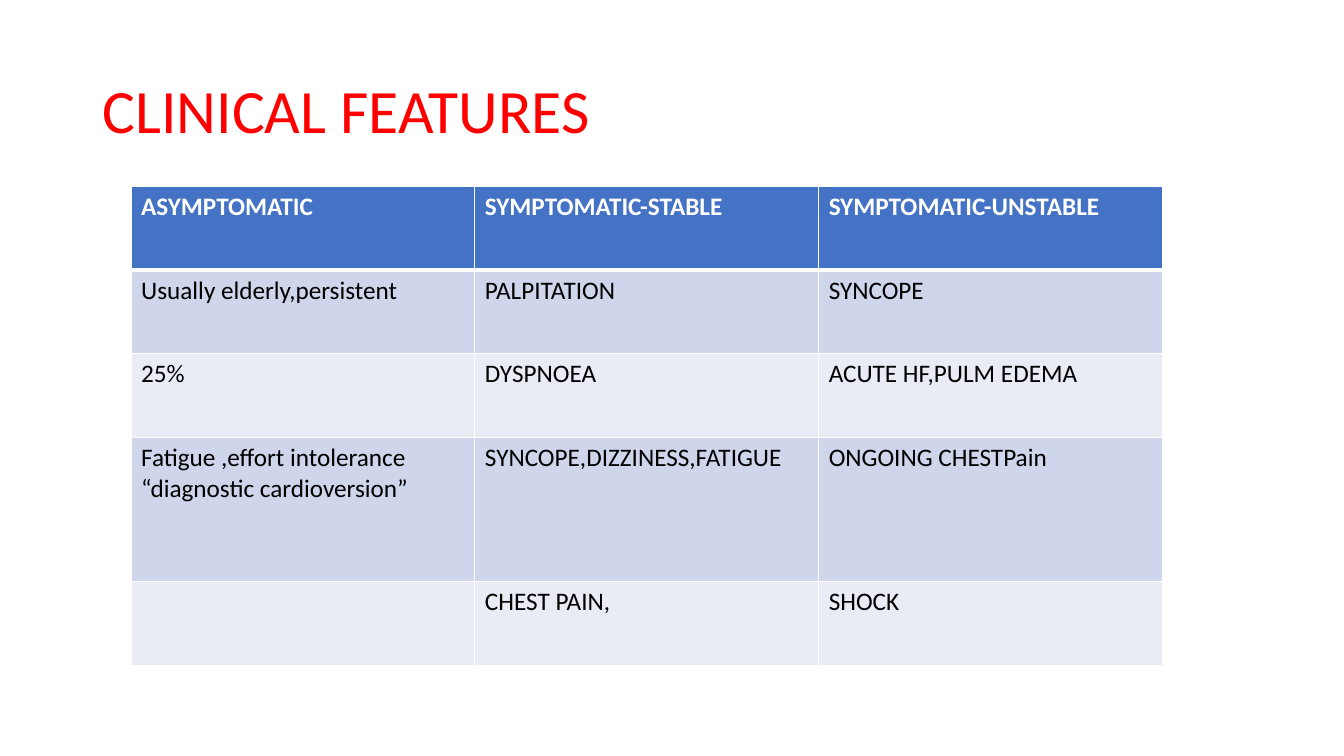
import lxml.etree
import pptx
import pptx.dml.color
import pptx.enum.text
import pptx.oxml.ns
import pptx.util

Inches = pptx.util.Inches
RGBColor = pptx.dml.color.RGBColor

RED = RGBColor(0xFF, 0x00, 0x00)
WHITE = RGBColor(0xFF, 0xFF, 0xFF)
BLACK = RGBColor(0x00, 0x00, 0x00)
HEADER_BLUE = RGBColor(0x44, 0x72, 0xC4)
BANDS = (RGBColor(0xCF, 0xD5, 0xEA), RGBColor(0xE9, 0xEB, 0xF5))
FONT = "Calibri"

TITLE_BOX = (0.92, 0.4, 11.5, 1.45)
TABLE_BOX = (1.3, 1.85, 10.23, 4.76)
ROW_HEIGHTS = (0.83, 0.83, 0.83, 1.43, 0.83)
FEATURES = (
    ("ASYMPTOMATIC", "SYMPTOMATIC-STABLE", "SYMPTOMATIC-UNSTABLE"),
    ("Usually elderly,persistent", "PALPITATION", "SYNCOPE"),
    ("25%", "DYSPNOEA", "ACUTE HF,PULM EDEMA"),
    ("Fatigue ,effort intolerance\n“diagnostic cardioversion”",
     "SYNCOPE,DIZZINESS,FATIGUE", "ONGOING CHESTPain"),
    ("", "CHEST PAIN,", "SHOCK"),
)


def add_span(para, text, size, color, bold=False):
    span = para.add_run()
    span.text = text
    span.font.name = FONT
    span.font.size = pptx.util.Pt(size)
    span.font.color.rgb = color
    span.font.bold = bold


def add_title(page, box, text):
    frame = page.shapes.add_textbox(*map(Inches, box)).text_frame
    frame.word_wrap = True
    frame.vertical_anchor = pptx.enum.text.MSO_ANCHOR.MIDDLE
    para = frame.paragraphs[0]
    para.line_spacing = 0.9
    add_span(para, text, 44, RED)


def set_borders(cell, top, bottom):
    """Draw white cell borders, 1 point wide at the sides."""
    qn = pptx.oxml.ns.qn
    properties = cell._tc.get_or_add_tcPr()
    for side, width in (("L", 1), ("R", 1), ("T", top), ("B", bottom)):
        line = lxml.etree.SubElement(properties, qn(f"a:ln{side}"),
                                     w=str(pptx.util.Pt(width)))
        fill = lxml.etree.SubElement(line, qn("a:solidFill"))
        lxml.etree.SubElement(fill, qn("a:srgbClr"), val=str(WHITE))


def fill_cell(cell, text, row_index):
    is_header = row_index == 0
    set_borders(cell, top=3 if row_index == 1 else 1,
                bottom=3 if is_header else 1)
    cell.fill.solid()
    cell.fill.fore_color.rgb = (HEADER_BLUE if is_header
                                else BANDS[(row_index - 1) % 2])
    frame = cell.text_frame
    for index, line in enumerate(text.splitlines()):
        para = frame.add_paragraph() if index else frame.paragraphs[0]
        add_span(para, line, 18, WHITE if is_header else BLACK, is_header)


def add_feature_table(page, box, rows):
    table = page.shapes.add_table(len(rows), len(rows[0]),
                                  *map(Inches, box)).table
    for row, height in zip(table.rows, ROW_HEIGHTS):
        row.height = Inches(height)
    for row_index, texts in enumerate(rows):
        for column_index, text in enumerate(texts):
            fill_cell(table.cell(row_index, column_index), text, row_index)


def main():
    deck = pptx.Presentation()
    deck.slide_width = Inches(13.33)
    deck.slide_height = Inches(7.5)
    page = deck.slides.add_slide(deck.slide_layouts[6])
    add_title(page, TITLE_BOX, "CLINICAL FEATURES")
    add_feature_table(page, TABLE_BOX, FEATURES)
    deck.save("out.pptx")


if __name__ == "__main__":
    main()
